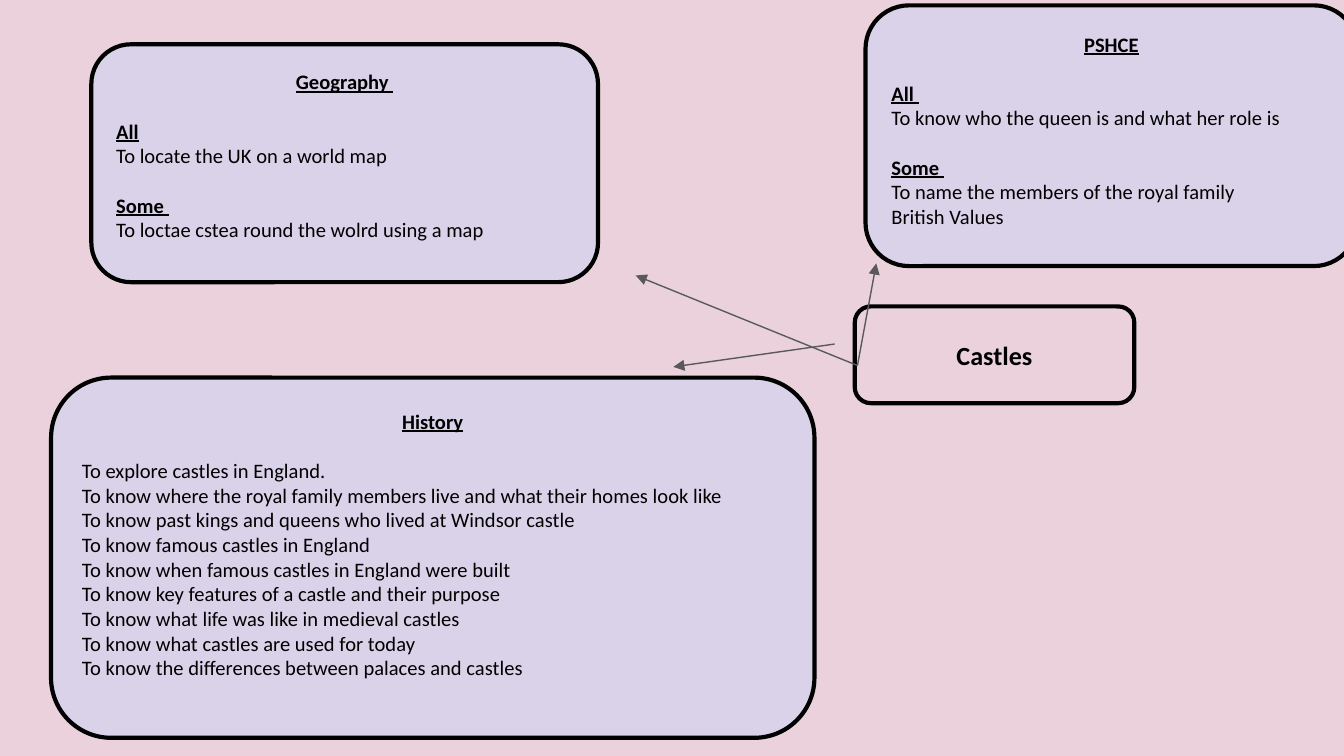
from lxml.etree import SubElement
from pptx import Presentation
from pptx.dml.color import RGBColor
from pptx.enum.shapes import MSO_CONNECTOR as Link, MSO_SHAPE as Shape
from pptx.enum.text import MSO_ANCHOR as Anchor, PP_ALIGN as Align
from pptx.oxml.ns import qn
from pptx.util import Inches, Pt

COLORS = {"back": "EAD1DC", "card": "D9D2E9", "ink": "000000", "arrow": "595959"}
FONT = "Calibri"
GAP = 13.2  # one line of 11 pt text

TOPIC = ("Castles", (6.36, 2.28, 2.08, 0.72))

# title, place, groups of (label, lines)
HISTORY = ("History", (0.38, 2.81, 5.68, 2.68), [
    (None, [
        "To explore castles in England.",
        "To know where the royal family members live and what their homes look like",
        "To know past kings and queens who lived at Windsor castle",
        "To know famous castles in England",
        "To know when famous castles in England were built",
        "To know key features of a castle and their purpose",
        "To know what life was like in medieval castles",
        "To know what castles are used for today",
        "To know the differences between palaces and castles",
    ]),
])
PSHCE = ("PSHCE", (6.44, 0.04, 3.66, 1.94), [
    ("All ", ["To know who the queen is and what her role is"]),
    ("Some ", ["To name the members of the royal family", "British Values"]),
])
GEOGRAPHY = ("Geography ", (0.68, 0.33, 3.77, 1.77), [
    ("All", ["To locate the UK on a world map"]),
    ("Some ", ["To loctae cstea round the wolrd using a map"]),
])

# start, end
TO_HISTORY = ((6.21, 2.56), (5.01, 2.73))
TO_GEOGRAPHY = ((6.38, 2.72), (4.73, 2.05))
TO_PSHCE = ((6.38, 2.72), (6.52, 1.96))


def color(name):
    return RGBColor.from_string(COLORS[name])


def add_box(slide, place, fill, anchor):
    box = slide.shapes.add_shape(Shape.ROUNDED_RECTANGLE, *map(Inches, place))
    box.shadow.inherit = False
    box.fill.solid()
    box.fill.fore_color.rgb = color(fill)
    box.line.color.rgb = color("ink")
    box.line.width = Pt(2.25)
    frame = box.text_frame
    frame.word_wrap = True
    frame.vertical_anchor = anchor
    frame.margin_left = frame.margin_right = Inches(0.1)
    frame.margin_top = frame.margin_bottom = Inches(0.1)
    return frame


def write(frame, text, size=11, bold=False, under=False, align=Align.LEFT, before=0):
    """Fill the first paragraph if it is empty, otherwise add one."""
    para = frame.add_paragraph() if frame.text else frame.paragraphs[0]
    para.alignment = align
    para.space_before = Pt(before)
    run = para.add_run()
    run.text = text
    font = run.font
    font.name, font.size = FONT, Pt(size)
    font.bold, font.underline = bold, under
    font.color.rgb = color("ink")


def add_card(slide, title, place, groups):
    frame = add_box(slide, place, "card", Anchor.TOP)
    write(frame, title, bold=True, under=True, align=Align.CENTER)
    for label, lines in groups:
        if label:
            write(frame, label, bold=True, under=True, before=GAP)
        for i, line in enumerate(lines):
            write(frame, line, before=0 if label or i else GAP)


def add_arrow(slide, start, end):
    arrow = slide.shapes.add_connector(Link.STRAIGHT, *map(Inches, start + end))
    arrow.line.color.rgb = color("arrow")
    arrow.line.width = Pt(0.75)
    props = arrow.line._get_or_add_ln()
    SubElement(props, qn("a:tailEnd"), type="triangle", w="med", len="med")
    SubElement(arrow._element.spPr, qn("a:effectLst"))


def main():
    deck = Presentation()
    deck.slide_width = Inches(10)
    deck.slide_height = deck.slide_width * 9 // 16
    slide = deck.slides.add_slide(deck.slide_layouts[6])
    slide.background.fill.solid()
    slide.background.fill.fore_color.rgb = color("back")

    name, place = TOPIC
    frame = add_box(slide, place, "back", Anchor.MIDDLE)
    write(frame, name, size=14, bold=True, align=Align.CENTER)
    add_card(slide, *HISTORY)
    add_arrow(slide, *TO_HISTORY)
    add_card(slide, *PSHCE)
    add_card(slide, *GEOGRAPHY)
    add_arrow(slide, *TO_GEOGRAPHY)
    add_arrow(slide, *TO_PSHCE)
    deck.save("out.pptx")


if __name__ == "__main__":
    main()
